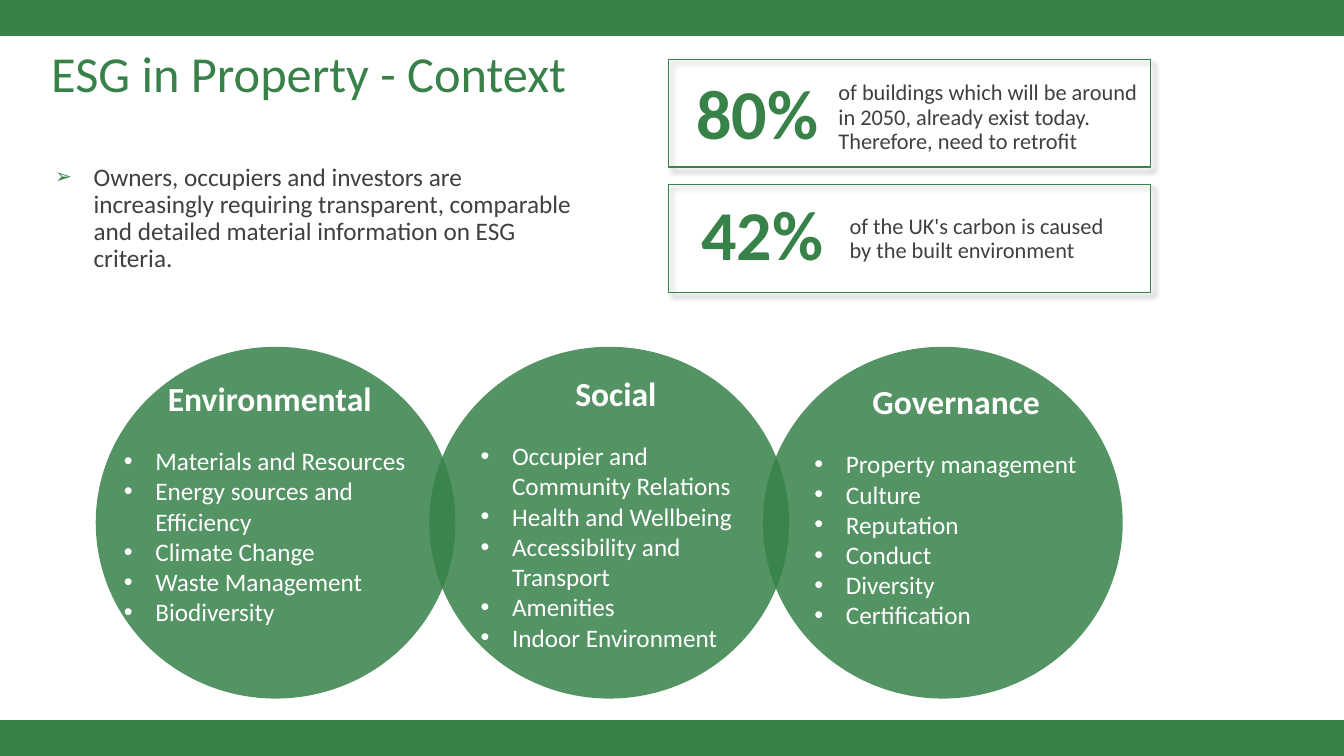
from lxml import etree
from pptx import Presentation
from pptx.dml.color import RGBColor
from pptx.enum import shapes, text
from pptx.oxml import ns
from pptx.util import Pt

COLORS = {"green": "38824A", "grey": "404040", "white": "FFFFFF", "black": "000000"}
FONT = "Calibri"
SLIDE_WIDTH, SLIDE_HEIGHT = 960, 540
BAND_HEIGHT = 25.2
CIRCLE_LEFT, CIRCLE_TOP, CIRCLE_PITCH = 68.4, 247.7, 238.3
CIRCLE_WIDTH, CIRCLE_HEIGHT = 257, 251.3

# heading, text box (left, top, width, height), topics
PILLARS = [
    ("Environmental", (81.4, 266.4, 222.5, 186.5),
     ["Materials and Resources", "Energy sources and Efficiency", "Climate Change",
      "Waste Management", "Biodiversity"]),
    ("Social", (336.2, 262.8, 207.4, 208),
     ["Occupier and Community Relations", "Health and Wellbeing",
      "Accessibility and Transport", "Amenities", "Indoor Environment"]),
    ("Governance", (574.6, 268.6, 216.7, 191.5),
     ["Property management", "Culture", "Reputation", "Conduct", "Diversity",
      "Certification"]),
]

# frame top, figure, figure box, caption, caption box
STATS = [
    (42.5, "80%", (490.3, 46.1, 181.4, 67.7),
     "of buildings which will be around in 2050, already exist today. "
     "Therefore, need to retrofit", (591.8, 54.7, 229, 59.8)),
    (131.8, "42%", (493.9, 132.5, 201.6, 67.7),
     "of the UK's carbon is caused by the built environment",
     (599.8, 150.1, 213.8, 42.2)),
]


def rgb(name):
    return RGBColor.from_string(COLORS[name])


def add_node(parent, tag, **attributes):
    node = etree.SubElement(parent, ns.qn(tag))
    for key, value in attributes.items():
        node.set(key, str(value))
    return node


def add_figure(page, kind, area, fill=None, line=None):
    figure = page.shapes.add_shape(kind, *map(Pt, area))
    figure.shadow.inherit = False
    if fill:
        figure.fill.solid()
        figure.fill.fore_color.rgb = rgb(fill)
    else:
        figure.fill.background()
    if line:
        figure.line.color.rgb = rgb(line)
        figure.line.width = Pt(1)
    else:
        figure.line.fill.background()
    return figure


def add_circle(page, left):
    area = (left, CIRCLE_TOP, CIRCLE_WIDTH, CIRCLE_HEIGHT)
    circle = add_figure(page, shapes.MSO_SHAPE.OVAL, area, fill="green")
    color = circle._element.spPr.find(ns.qn("a:solidFill"))[0]
    add_node(color, "a:alpha", val=86000)


def add_stat_frame(page, top):
    area = (477.4, top, 344.2, 77)
    frame = add_figure(page, shapes.MSO_SHAPE.RECTANGLE, area, line="green")
    effects = frame._element.spPr.find(ns.qn("a:effectLst"))
    shadow = add_node(effects, "a:outerShdw", blurRad=Pt(4), dist=Pt(3),
                      dir=45 * 60000, algn="tl", rotWithShape=0)
    color = add_node(shadow, "a:srgbClr", val=COLORS["black"])
    add_node(color, "a:alpha", val=40000)


def add_text_box(page, area):
    box = page.shapes.add_textbox(*map(Pt, area))
    box.text_frame.word_wrap = True
    return box.text_frame


def write(para, wording, size, color, bold=False):
    span = para.add_run()
    span.text = wording
    span.font.name = FONT
    span.font.size = Pt(size)
    span.font.bold = bold
    span.font.color.rgb = rgb(color)


def add_bullet(para, mark, indent, color=None, percent=None):
    properties = para._p.get_or_add_pPr()
    properties.set("marL", str(Pt(indent)))
    properties.set("indent", str(Pt(-indent)))
    if color:
        add_node(add_node(properties, "a:buClr"), "a:srgbClr", val=COLORS[color])
    if percent:
        add_node(properties, "a:buSzPct", val=percent * 1000)
    add_node(properties, "a:buFont", typeface="Arial")
    add_node(properties, "a:buChar", char=mark)


def add_title(page, wording):
    frame = add_text_box(page, (29.5, 0, 462.2, 103.7))
    frame.vertical_anchor = text.MSO_ANCHOR.MIDDLE
    para = frame.paragraphs[0]
    para.space_after = Pt(6)
    write(para, wording, 36, "green")


def add_statement(page, wording):
    para = add_text_box(page, (32.4, 113.8, 391, 141.8)).paragraphs[0]
    para.line_spacing = 0.9
    add_bullet(para, "➢", 27.4, "green", 80)
    write(para, wording, 18, "grey")


def add_stat(page, top, figure, figure_area, caption, caption_area):
    add_stat_frame(page, top)
    write(add_text_box(page, figure_area).paragraphs[0], figure, 50, "green", bold=True)
    para = add_text_box(page, caption_area).paragraphs[0]
    para.line_spacing = 0.9
    write(para, caption, 16, "grey")


def add_pillar_text(page, heading, area, topics):
    frame = add_text_box(page, area)
    para = frame.paragraphs[0]
    para.alignment = text.PP_ALIGN.CENTER
    para.space_after = Pt(19.5)
    write(para, heading, 24, "white", bold=True)
    for topic in topics:
        para = frame.add_paragraph()
        add_bullet(para, "•", 22.5)
        write(para, topic, 18, "white")


def main():
    deck = Presentation()
    deck.slide_width, deck.slide_height = Pt(SLIDE_WIDTH), Pt(SLIDE_HEIGHT)
    page = deck.slides.add_slide(deck.slide_layouts[6])

    for top in (0, SLIDE_HEIGHT - BAND_HEIGHT):
        add_figure(page, shapes.MSO_SHAPE.RECTANGLE,
                   (0, top, SLIDE_WIDTH, BAND_HEIGHT), "green", "green")
    add_title(page, "ESG in Property - Context")
    add_statement(page, "Owners, occupiers and investors are increasingly requiring "
                        "transparent, comparable and detailed material information "
                        "on ESG criteria.")
    for stat in STATS:
        add_stat(page, *stat)
    for index in range(len(PILLARS)):
        add_circle(page, CIRCLE_LEFT + index * CIRCLE_PITCH)
    for pillar in PILLARS:
        add_pillar_text(page, *pillar)

    deck.save("out.pptx")


if __name__ == "__main__":
    main()
